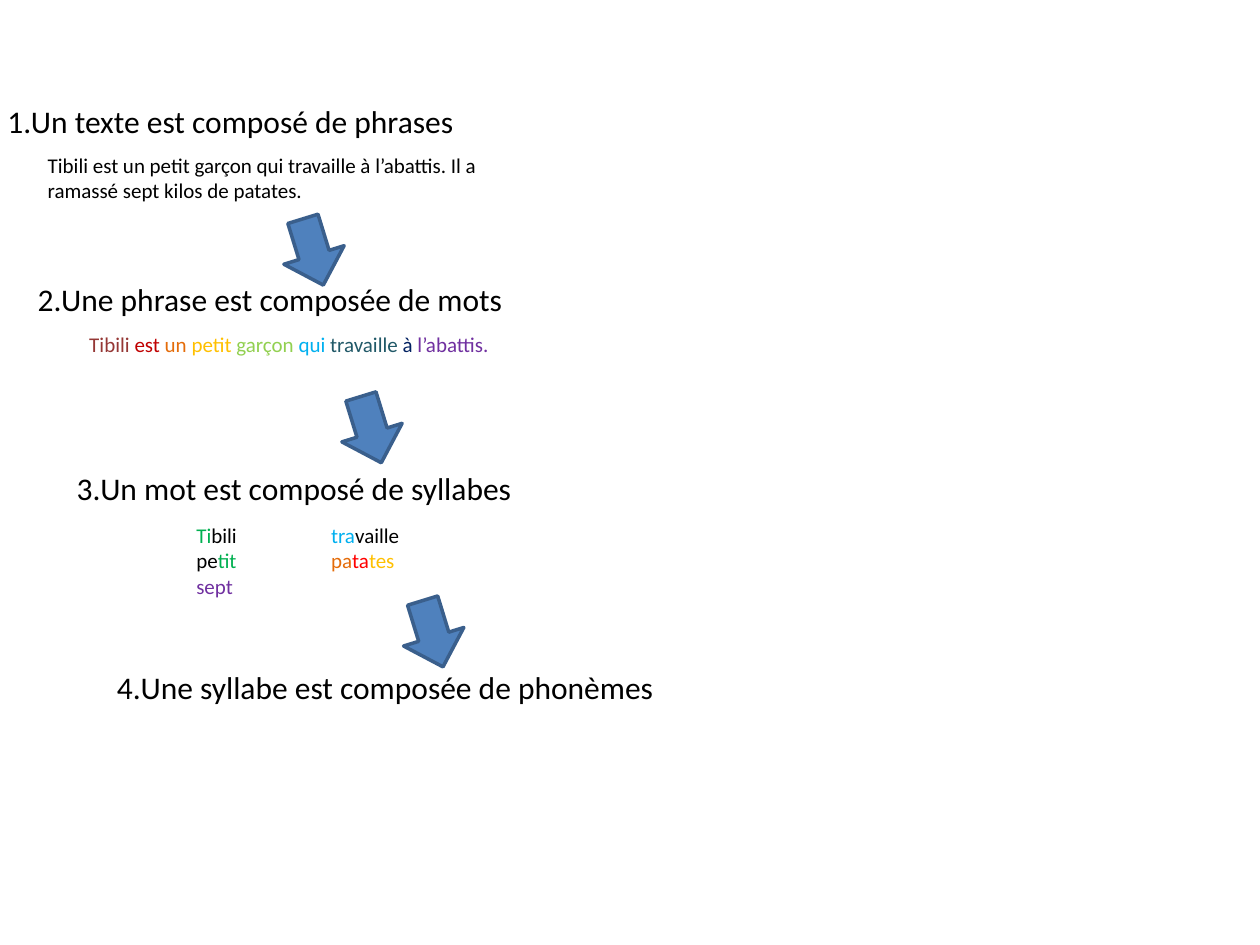
from pptx import Presentation
from pptx.dml.color import RGBColor
from pptx.enum.shapes import MSO_SHAPE
from pptx.oxml.ns import qn
from pptx.util import Inches, Pt
from lxml import etree

RIGHT_ARROW = MSO_SHAPE.RIGHT_ARROW
FONT = "Calibri"

BLACK = RGBColor(0x00, 0x00, 0x00)
BROWN = RGBColor(0x95, 0x37, 0x35)
DARK_RED = RGBColor(0xC0, 0x00, 0x00)
RED = RGBColor(0xFF, 0x00, 0x00)
ORANGE = RGBColor(0xE4, 0x6C, 0x0A)
GOLD = RGBColor(0xFF, 0xC0, 0x00)
LIME = RGBColor(0x92, 0xD0, 0x50)
GREEN = RGBColor(0x00, 0xB0, 0x50)
SKY = RGBColor(0x00, 0xB0, 0xF0)
TEAL = RGBColor(0x21, 0x59, 0x68)
NAVY = RGBColor(0x00, 0x20, 0x60)
PURPLE = RGBColor(0x70, 0x30, 0xA0)
ARROW_FILL = RGBColor(0x4F, 0x81, 0xBD)
ARROW_LINE = RGBColor(0x3A, 0x5F, 0x8C)

# Left, top, width, text
HEADINGS = [
    (-0.04, 0.76, 3.78, "1.Un texte est composé de phrases"),
    (0.2, 2.17, 4.02, "2.Une phrase est composée de mots"),
    (0.51, 3.67, 4.02, "3.Un mot est composé de syllabes"),
    (0.83, 5.25, 4.65, "4.Une syllabe est composée de phonèmes"),
]
SENTENCES = [[(
    "Tibili est un petit garçon qui travaille à l’abattis. "
    "Il a ramassé sept kilos de patates.", BLACK)]]
WORDS = [[
    ("Tibili ", BROWN), ("est ", DARK_RED), ("un ", ORANGE),
    ("petit ", GOLD), ("garçon ", LIME), ("qui ", SKY),
    ("travaille ", TEAL), ("à ", NAVY), ("l’abattis.", PURPLE),
]]
SYLLABLES = [
    [("Ti", GREEN), ("bili\t", BLACK), ("tra", SKY), ("vaille", BLACK)],
    [("pe", BLACK), ("tit\t", GREEN), ("pa", ORANGE), ("ta", RED), ("tes", GOLD)],
    [("sept", PURPLE)],
]
ARROW_POSITIONS = [(2.21, 1.75), (2.67, 3.16), (3.16, 4.78)]


def add_tab_stop(paragraph, position):
    properties = paragraph._p.get_or_add_pPr()
    tabs = etree.SubElement(properties, qn("a:tabLst"))
    etree.SubElement(tabs, qn("a:tab"), pos=str(Inches(position)), algn="l")


def add_text(slide, left, top, width, height, lines, size, tab=None):
    """Add a text box; each line is a list of (text, colour) runs."""
    box = slide.shapes.add_textbox(
        Inches(left), Inches(top), Inches(width), Inches(height))
    frame = box.text_frame
    frame.word_wrap = True
    for index, line in enumerate(lines):
        paragraph = frame.add_paragraph() if index else frame.paragraphs[0]
        if tab:
            add_tab_stop(paragraph, tab)
        paragraph.font.name = FONT
        paragraph.font.size = Pt(size)
        for text, color in line:
            run = paragraph.add_run()
            run.text = text
            run.font.color.rgb = color


def add_arrow(slide, left, top):
    arrow = slide.shapes.add_shape(
        RIGHT_ARROW, Inches(left), Inches(top), Inches(0.55), Inches(0.5))
    arrow.rotation = 72.9
    arrow.shadow.inherit = False
    arrow.fill.solid()
    arrow.fill.fore_color.rgb = ARROW_FILL
    arrow.line.color.rgb = ARROW_LINE
    arrow.line.width = Pt(2)


def main():
    presentation = Presentation()
    presentation.slide_width = Inches(10)
    presentation.slide_height = Inches(7.5)
    slide = presentation.slides.add_slide(presentation.slide_layouts[6])

    # Four levels, from text to phonemes
    for left, top, width, text in HEADINGS:
        add_text(slide, left, top, width, 0.4, [[(text, BLACK)]], 18)

    # Example under each level
    add_text(slide, 0.28, 1.16, 3.78, 0.5, SENTENCES, 12)
    add_text(slide, 0.61, 2.58, 3.45, 0.71, WORDS, 12)
    add_text(slide, 1.46, 4.1, 2.13, 0.71, SYLLABLES, 12, tab=1.07)

    # Arrows from one level to the next
    for left, top in ARROW_POSITIONS:
        add_arrow(slide, left, top)

    presentation.save("out.pptx")


if __name__ == "__main__":
    main()
